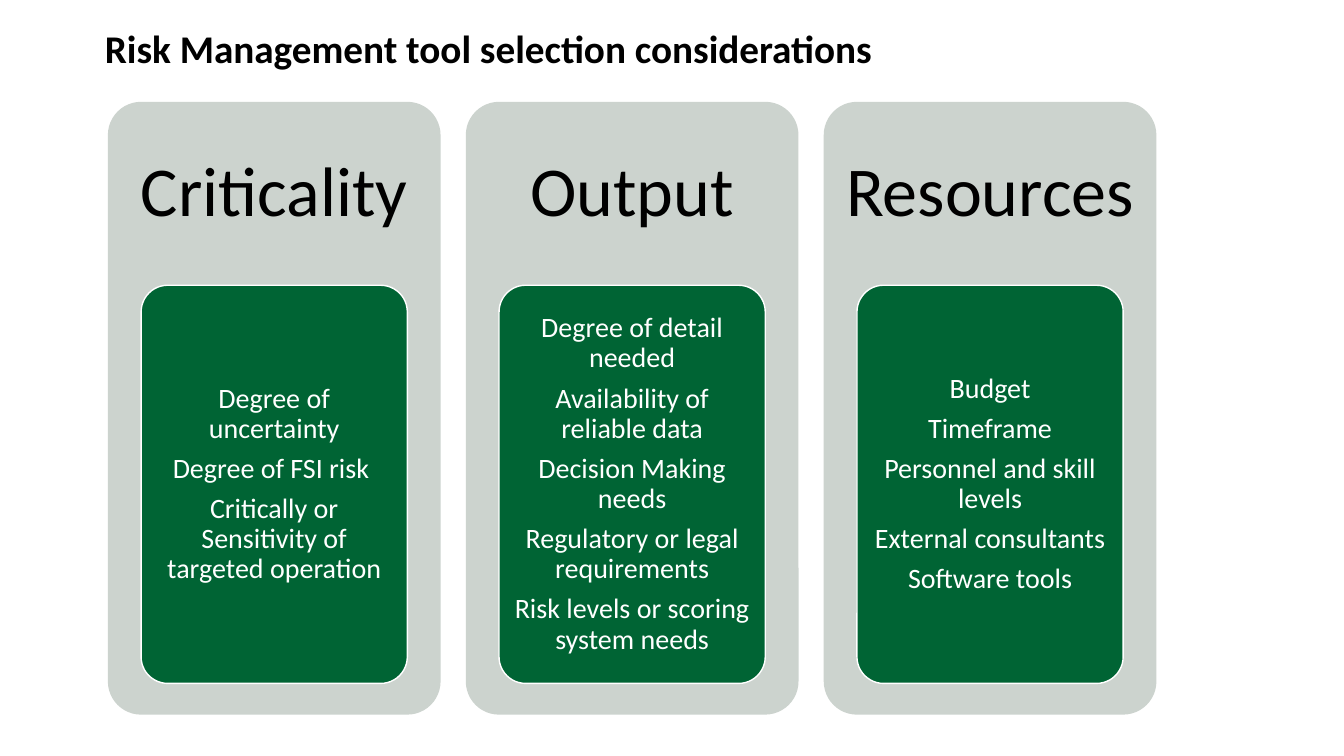
from dataclasses import dataclass

from pptx import Presentation
from pptx.dml.color import RGBColor
from pptx.enum.shapes import MSO_SHAPE
from pptx.enum.text import MSO_ANCHOR, MSO_AUTO_SIZE, PP_ALIGN
from pptx.util import Pt

EMU_PER_PX = 9144  # 100 px to the inch


@dataclass(frozen=True)
class Theme:
    font: str = "Calibri"
    ink: str = "000000"
    paper: str = "FFFFFF"
    card: str = "CCD3CE"
    panel: str = "006434"
    title_size: int = 28
    heading_size: int = 50
    item_size: int = 20


def px(length):
    return length * EMU_PER_PX


def apply(target, values):
    for name, value in values.items():
        setattr(target, name, value)


class PageBuilder:
    def __init__(self, page, theme):
        self.page = page
        self.theme = theme

    def place(self, shape, box):
        names = ("left", "top", "width", "height")
        apply(shape, dict(zip(names, map(px, box))))

    def set_text(self, shape, lines, size, color, inset, bold=False, **para_format):
        """Fill a shape with one paragraph per line; inset is (across, down)."""
        across, down = map(px, inset)
        frame = shape.text_frame
        apply(frame, {
            "text": "\n".join(lines), "word_wrap": True,
            "margin_left": across, "margin_right": across,
            "margin_top": down, "margin_bottom": down,
        })
        for para in frame.paragraphs:
            apply(para, para_format)
            for span in para.runs:
                apply(span.font, {"name": self.theme.font, "size": Pt(size), "bold": bold})
                span.font.color.rgb = RGBColor.from_string(color)
        return frame

    def set_centred_text(self, shape, lines, size, color, inset):
        frame = self.set_text(shape, lines, size, color, inset, alignment=PP_ALIGN.CENTER,
                              line_spacing=0.9, space_after=Pt(0.35 * size))
        frame.vertical_anchor = MSO_ANCHOR.MIDDLE

    def title(self, text, box):
        shape = self.page.shapes.title
        self.place(shape, box)
        frame = self.set_text(shape, [text], self.theme.title_size, self.theme.ink,
                              (10, 5), bold=True, alignment=PP_ALIGN.LEFT)
        apply(frame, {"vertical_anchor": MSO_ANCHOR.TOP,
                      "auto_size": MSO_AUTO_SIZE.SHAPE_TO_FIT_TEXT})

    def rounded(self, box, fill, outline=None):
        shape = self.page.shapes.add_shape(MSO_SHAPE.ROUNDED_RECTANGLE, *map(px, box))
        shape.shadow.inherit = False
        shape.adjustments[0] = 0.1
        shape.fill.solid()
        shape.fill.fore_color.rgb = RGBColor.from_string(fill)
        if outline:
            shape.line.color.rgb = RGBColor.from_string(outline)
            shape.line.width = Pt(1)
        else:
            shape.line.fill.background()
        return shape

    def heading(self, text, box):
        shape = self.page.shapes.add_textbox(*map(px, box))
        self.set_centred_text(shape, [text], self.theme.heading_size, self.theme.ink, (21, 21))

    def column(self, left, heading, items):
        theme = self.theme
        self.rounded((left, 101, 330, 608), theme.card)
        self.heading(heading, (left, 101, 330, 182))
        panel = self.rounded((left + 33, 283, 264, 395), theme.panel, theme.paper)
        self.set_centred_text(panel, items, theme.item_size, theme.paper, (6, 4))


COLUMNS = {
    "Criticality": [
        "Degree of uncertainty",
        "Degree of FSI risk ",
        "Critically or Sensitivity of targeted operation",
    ],
    "Output": [
        "Degree of detail needed",
        "Availability of reliable data",
        "Decision Making needs",
        "Regulatory or legal requirements",
        "Risk levels or scoring system needs",
    ],
    "Resources": [
        "Budget",
        "Timeframe",
        "Personnel and skill levels",
        "External consultants",
        "Software tools",
    ],
}


def main():
    deck = Presentation()
    apply(deck, {"slide_width": px(1333), "slide_height": px(750)})
    title_only = deck.slide_layouts[5]
    builder = PageBuilder(deck.slides.add_slide(title_only), Theme())
    builder.title("Risk Management tool selection considerations", (94, 19, 914, 57))
    for index, (heading, items) in enumerate(COLUMNS.items()):
        builder.column(107 + 355 * index, heading, items)
    deck.save("out.pptx")


if __name__ == "__main__":
    main()
